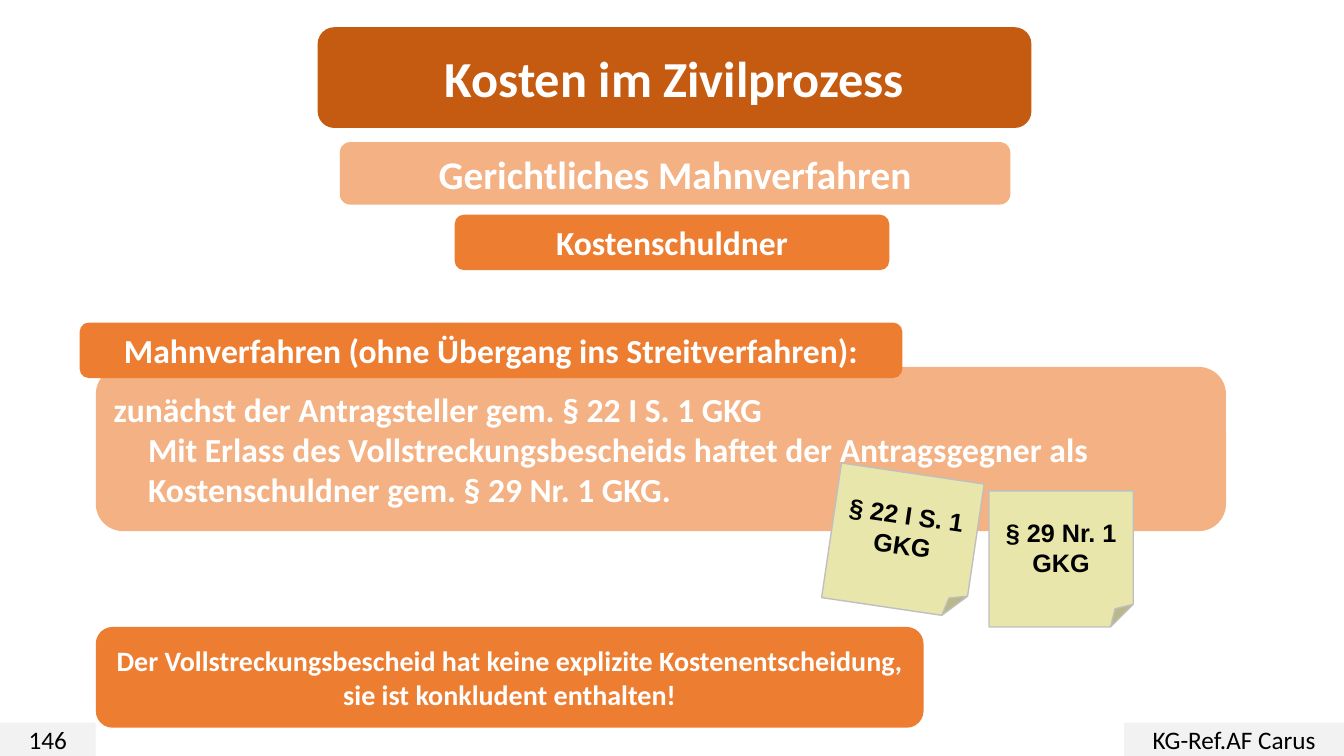
from pptx import Presentation
from pptx.dml.color import RGBColor
from pptx.enum.shapes import MSO_SHAPE
from pptx.enum.text import MSO_ANCHOR, PP_ALIGN
from pptx.util import Inches, Pt

ROUNDED = MSO_SHAPE.ROUNDED_RECTANGLE
RECTANGLE = MSO_SHAPE.RECTANGLE
NOTE = MSO_SHAPE.FOLDED_CORNER
MIDDLE = MSO_ANCHOR.MIDDLE
CENTER, LEFT = PP_ALIGN.CENTER, PP_ALIGN.LEFT

WHITE = RGBColor(0xFF, 0xFF, 0xFF)
BLACK = RGBColor(0x00, 0x00, 0x00)
DARK_ORANGE = RGBColor(0xC5, 0x5A, 0x11)
ORANGE = RGBColor(0xED, 0x7D, 0x31)
LIGHT_ORANGE = RGBColor(0xF4, 0xB1, 0x83)
FOOTER_GREY = RGBColor(0xF2, 0xF2, 0xF2)
NOTE_YELLOW = RGBColor(0xE9, 0xE6, 0xAB)
NOTE_EDGE = RGBColor(0xBF, 0xBF, 0xBF)

prs = Presentation()
prs.slide_width = Inches(13.33)
prs.slide_height = Inches(7.5)
slide = prs.slides.add_slide(prs.slide_layouts[6])


def add_box(kind, box, fill, text, size, color=WHITE, bold=True,
            font="Calibri", align=CENTER):
    """Add a filled shape with text; box is left, top, width, height in inches."""
    shape = slide.shapes.add_shape(kind, *(Inches(value) for value in box))
    shape.shadow.inherit = False
    shape.fill.solid()
    shape.fill.fore_color.rgb = fill
    shape.line.fill.background()
    frame = shape.text_frame
    frame.word_wrap = True
    frame.vertical_anchor = MIDDLE
    frame.text = text
    for paragraph in frame.paragraphs:
        paragraph.alignment = align
        for run in paragraph.runs:
            run.font.name = font
            run.font.size = Pt(size)
            run.font.bold = bold
            run.font.color.rgb = color
    return shape


# Headings
add_box(ROUNDED, (3.37, 1.41, 6.65, 0.62), LIGHT_ORANGE,
        "Gerichtliches Mahnverfahren", 28)
add_box(ROUNDED, (3.15, 0.27, 7.08, 1), DARK_ORANGE, "Kosten im Zivilprozess", 36)
add_box(ROUNDED, (4.51, 2.13, 4.31, 0.55), ORANGE, "Kostenschuldner", 24)

# Footer
for left, width, text in [(0, 0.95, "146"), (11.15, 2.18, "KG-Ref.AF Carus")]:
    add_box(RECTANGLE, (left, 7.17, width, 0.33), FOOTER_GREY, text, 18, BLACK, False)

# Liable parties, with the tab overlapping the panel
liability = add_box(
    ROUNDED, (0.95, 3.64, 11.21, 1.63), LIGHT_ORANGE,
    "zunächst der Antragsteller gem. § 22 I S. 1 GKG\n"
    "Mit Erlass des Vollstreckungsbescheids haftet der Antragsgegner als "
    "Kostenschuldner gem. § 29 Nr. 1 GKG.", 24, align=LEFT)
indented = liability.text_frame.paragraphs[1]
indented_properties = indented._p.get_or_add_pPr()
indented_properties.set("marL", str(Inches(0.34)))
indented_properties.set("indent", "0")
add_box(ROUNDED, (0.79, 3.2, 8.16, 0.55), ORANGE,
        "Mahnverfahren (ohne Übergang ins Streitverfahren):", 24)

# Statute notes
for left, top, angle, statute in [(8.24, 4.69, 8.4, "§ 22 I S. 1 GKG"),
                                  (9.81, 4.87, 0, "§ 29 Nr. 1 GKG")]:
    note = add_box(NOTE, (left, top, 1.43, 1.35), NOTE_YELLOW, statute, 18,
                   BLACK, font="Arial")
    note.rotation = angle
    note.line.color.rgb = NOTE_EDGE
    note.line.width = Pt(1)

# Conclusion
add_box(ROUNDED, (0.95, 6.22, 8.21, 1), ORANGE,
        "Der Vollstreckungsbescheid hat keine explizite Kostenentscheidung, "
        "sie ist konkludent enthalten!", 20)

prs.save("out.pptx")
